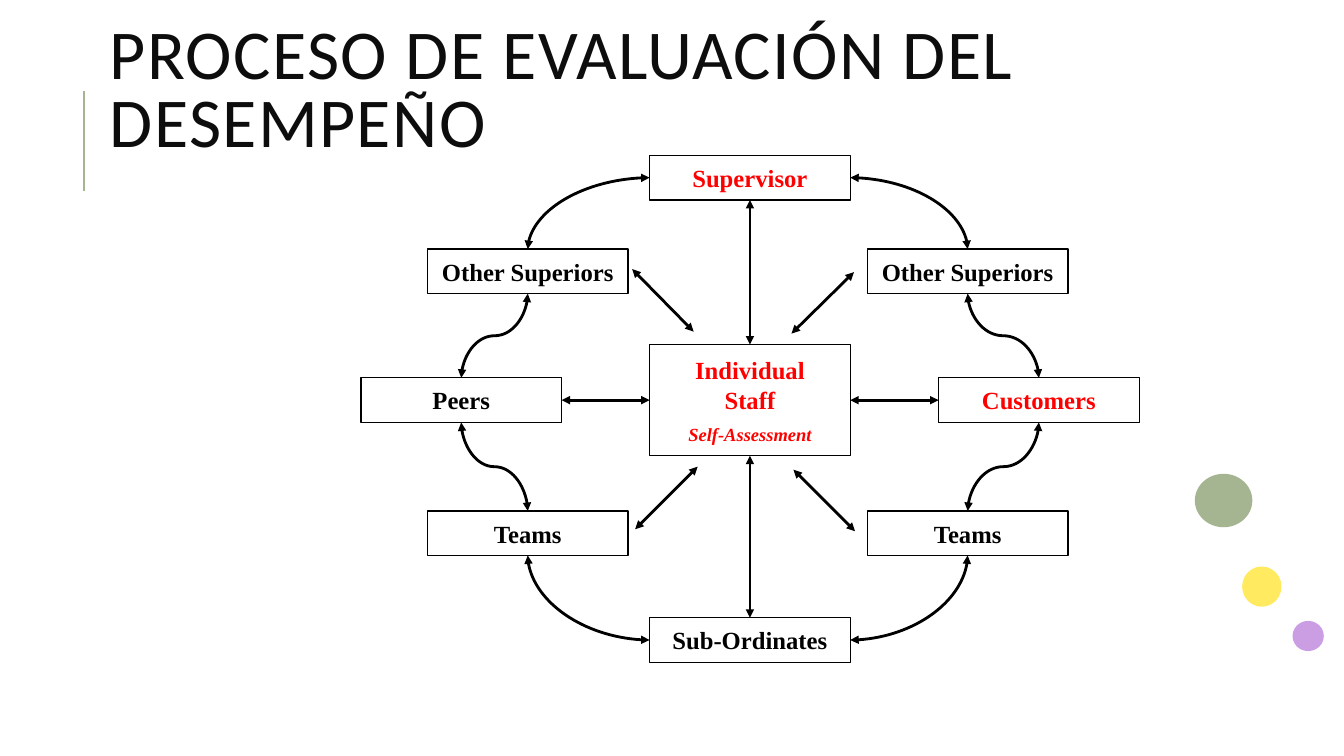
import pptx
import pptx.dml.color
import pptx.enum.shapes
import pptx.enum.text
import pptx.oxml.ns
import pptx.util
from lxml import etree

SHAPES = pptx.enum.shapes.MSO_SHAPE
CONNECTORS = pptx.enum.shapes.MSO_CONNECTOR
ALIGN = pptx.enum.text.PP_ALIGN
MIDDLE = pptx.enum.text.MSO_ANCHOR.MIDDLE
qn = pptx.oxml.ns.qn

BLACK, RED, INK, SAGE = "000000", "FF0000", "0D0D0D", "A5B592"


def color(value):
    return pptx.dml.color.RGBColor.from_string(value)


class Diagram:
    """Style and current slide; every length is a percentage of the slide's size."""

    title_font = "Calibri"
    box_font = "Times New Roman"
    box_width, box_height = 14.93, 5.9

    def __init__(self, presentation):
        self.width = presentation.slide_width
        self.height = presentation.slide_height
        self.slide = presentation.slides.add_slide(presentation.slide_layouts[6])

    def point(self, x, y):
        return round(self.width * x / 100), round(self.height * y / 100)

    def format_runs(self, paragraph, font, size, fill, bold=False, italic=False):
        for run in paragraph.runs:
            run.font.name = font
            run.font.size = pptx.util.Pt(size)
            run.font.color.rgb = color(fill)
            run.font.bold = bold
            run.font.italic = italic

    def title(self, text, left, top, width, height):
        shape = self.slide.shapes.add_textbox(
            *self.point(left, top), *self.point(width, height))
        frame = shape.text_frame
        frame.word_wrap = True
        frame.vertical_anchor = MIDDLE
        frame.text = text
        paragraph = frame.paragraphs[0]
        paragraph.line_spacing = 0.8
        self.format_runs(paragraph, self.title_font, 50, INK)
        paragraph.runs[0].font._element.set("spc", "100")

    def circle(self, fill, left, top, width, height):
        shape = self.slide.shapes.add_shape(
            SHAPES.OVAL, *self.point(left, top), *self.point(width, height))
        shape.shadow.inherit = False
        shape.fill.solid()
        shape.fill.fore_color.rgb = color(fill)
        shape.line.fill.background()

    def box(self, text, x, y, ink=BLACK, height=box_height, note=None):
        """Outlined box centred on (x, y), with an optional small italic note."""
        shape = self.slide.shapes.add_shape(
            SHAPES.RECTANGLE,
            *self.point(x - self.box_width / 2, y - height / 2),
            *self.point(self.box_width, height))
        shape.shadow.inherit = False
        shape.fill.background()
        shape.line.color.rgb = color(BLACK)
        shape.line.width = pptx.util.Pt(1)
        frame = shape.text_frame
        frame.word_wrap = True
        frame.vertical_anchor = MIDDLE
        frame.text = text
        heading = frame.paragraphs[0]
        heading.alignment = ALIGN.CENTER
        self.format_runs(heading, self.box_font, 17.6, ink, bold=True)
        if note:
            paragraph = frame.add_paragraph()
            paragraph.text = note
            paragraph.alignment = ALIGN.CENTER
            paragraph.space_before = pptx.util.Pt(6.6)
            self.format_runs(paragraph, self.box_font, 13.2, ink, True, True)

    def connector(self, kind, start, end, ink=BLACK, weight=2, arrows=True):
        """Line between two points given in EMU."""
        connector = self.slide.shapes.add_connector(kind, *start, *end)
        connector.line.color.rgb = color(ink)
        connector.line.width = pptx.util.Pt(weight)
        properties = connector._element.spPr
        if arrows:
            line = properties.find(qn("a:ln"))
            for tag in ("a:headEnd", "a:tailEnd"):
                etree.SubElement(line, qn(tag), type="triangle")
        etree.SubElement(properties, qn("a:effectLst"))
        return properties

    def line(self, start, end, **style):
        self.connector(CONNECTORS.STRAIGHT, self.point(*start), self.point(*end), **style)

    def arc(self, start, end):
        """Quarter curve that leaves sideways and arrives vertically."""
        properties = self.connector(CONNECTORS.CURVE, self.point(*start), self.point(*end))
        properties.find(qn("a:prstGeom")).set("prst", "curvedConnector2")

    def wave(self, upper, lower):
        """S curve that leaves and arrives vertically: a sideways one turned by 90°."""
        (x1, y1), (x2, y2) = self.point(*upper), self.point(*lower)
        center_x, center_y = (x1 + x2) // 2, (y1 + y2) // 2
        half_x, half_y = (x2 - x1) // 2, (y2 - y1) // 2
        properties = self.connector(
            CONNECTORS.CURVE,
            (center_x - half_y, center_y + half_x),
            (center_x + half_y, center_y - half_x))
        properties.find(qn("a:xfrm")).set("rot", str(90 * 60000))


def main():
    presentation = pptx.Presentation()
    presentation.slide_width = pptx.util.Inches(13.33)
    presentation.slide_height = pptx.util.Inches(7.5)
    diagram = Diagram(presentation)

    diagram.line((6.23, 25.33), (6.23, 12), ink=SAGE, weight=1.5, arrows=False)
    diagram.circle(SAGE, 88.9, 62.67, 4.28, 7.07)
    diagram.circle("FFEA60", 92.42, 74.93, 2.93, 5.33)
    diagram.circle("CB9EE4", 96.17, 82.13, 2.33, 4)
    diagram.title("PROCESO DE EVALUACIÓN DEL DESEMPEÑO", 7.43, 6.4, 79.74, 11.87)

    middle = 55.8
    top, upper, center, lower, bottom = 23.5, 35.9, 52.93, 70.53, 84.67
    staff_height = 14.7
    half_width, half_height = diagram.box_width / 2, diagram.box_height / 2

    diagram.box("Individual\vStaff", middle, center, RED, staff_height, "Self-Assessment")
    diagram.box("Supervisor", middle, top, RED)
    diagram.box("Sub-Ordinates", middle, bottom)

    # Each side: direction, inner column, outer column, outer label and its colour
    sides = ((-1, 39.27, 34.32, "Peers", BLACK), (1, 72, 77.3, "Customers", RED))
    for direction, inner, outer, label, ink in sides:
        diagram.box("Other Superiors", inner, upper)
        diagram.box(label, outer, center, ink)
        diagram.box("Teams", inner, lower)
        edge = middle + direction * half_width
        diagram.arc((edge, top), (inner, upper - half_height))
        diagram.wave((inner, upper + half_height), (outer, center - half_height))
        diagram.wave((outer, center + half_height), (inner, lower - half_height))
        diagram.arc((edge, bottom), (inner, lower + half_height))
        diagram.line((edge, center), (outer - direction * half_width, center))

    for direction, end in ((-1, top), (1, bottom)):
        diagram.line((middle, center + direction * staff_height / 2),
                     (middle, end - direction * half_height))

    diagonals = (
        ((51.91, 61.73), (47.26, 70)),
        ((63.54, 36), (58.89, 44.13)),
        ((63.62, 70.27), (59.04, 62.13)),
        ((51.61, 43.87), (47.04, 35.6)),
    )
    for start, end in diagonals:
        diagram.line(start, end)

    presentation.save("out.pptx")


if __name__ == "__main__":
    main()
